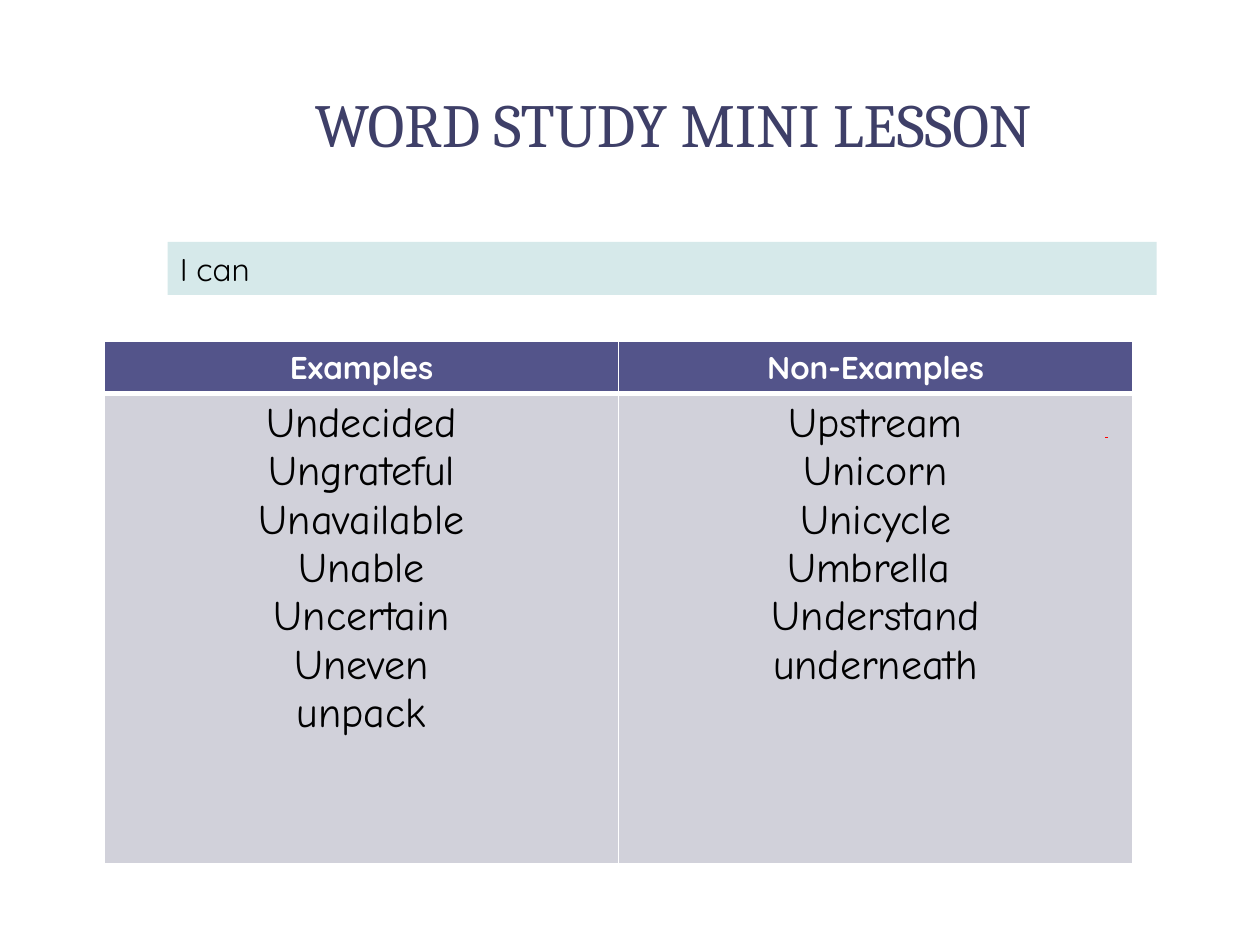
from lxml.etree import SubElement
from pptx import Presentation
from pptx.dml.color import RGBColor
from pptx.enum.shapes import MSO_CONNECTOR, MSO_SHAPE
from pptx.enum.text import MSO_ANCHOR, PP_ALIGN
from pptx.oxml.ns import qn
from pptx.util import Inches, Pt

TITLE_BLUE = RGBColor(0x3E, 0x3F, 0x68)
HEADER_BLUE = RGBColor(0x53, 0x54, 0x8A)
BODY_GREY = RGBColor(0xD1, 0xD1, 0xDA)
PALE_TEAL = RGBColor(0xD6, 0xE9, 0xEA)
RED = RGBColor(0xFF, 0x00, 0x00)
WHITE = RGBColor(0xFF, 0xFF, 0xFF)
BLACK = RGBColor(0x00, 0x00, 0x00)


def add_text(paragraph, text, font, size, color, align=PP_ALIGN.CENTER, bold=False):
    paragraph.alignment = align
    run = paragraph.add_run()
    run.text = text
    run.font.name = font
    run.font.size = Pt(size)
    run.font.color.rgb = color
    run.font.bold = bold


def add_borders(cell, top, bottom):
    properties = cell._tc.get_or_add_tcPr()
    for side, width in (("L", 1), ("R", 1), ("T", top), ("B", bottom)):
        line = SubElement(properties, qn(f"a:ln{side}"), w=str(Pt(width)))
        fill = SubElement(line, qn("a:solidFill"))
        SubElement(fill, qn("a:srgbClr"), val=str(WHITE))


prs = Presentation()
prs.slide_width, prs.slide_height = Inches(10), Inches(7.5)
slide = prs.slides.add_slide(prs.slide_layouts[5])

# Title
title = slide.shapes.title
title.left, title.top = Inches(0.83), Inches(0.41)
title.width, title.height = Inches(9.03), Inches(1.14)
title.text_frame.vertical_anchor = MSO_ANCHOR.MIDDLE
add_text(title.text_frame.paragraphs[0], "WORD STUDY MINI LESSON", "Cambria", 35, TITLE_BLUE)

# Word lists
columns = {
    "Examples": ["Undecided", "Ungrateful", "Unavailable", "Unable",
                 "Uncertain", "Uneven", "unpack"],
    "Non-Examples": ["Upstream", "Unicorn", "Unicycle", "Umbrella ",
                     "Understand", "underneath"],
}
word_table = slide.shapes.add_table(
    2, len(columns), Inches(0.83), Inches(2.71), Inches(8.16), Inches(4.13)).table
word_table.rows[0].height = Inches(0.4)
word_table.rows[1].height = Inches(3.73)
for index, (heading, words) in enumerate(columns.items()):
    word_table.columns[index].width = Inches(4.08)
    header, body = word_table.cell(0, index), word_table.cell(1, index)
    add_borders(header, top=1, bottom=3)
    add_borders(body, top=3, bottom=1)
    for cell, color in ((header, HEADER_BLUE), (body, BODY_GREY)):
        cell.fill.solid()
        cell.fill.fore_color.rgb = color
    add_text(header.text_frame.paragraphs[0], heading, "Quicksand", 18, WHITE, bold=True)
    for number, word in enumerate(words):
        frame = body.text_frame
        paragraph = frame.add_paragraph() if number else frame.paragraphs[0]
        add_text(paragraph, word, "Comic Neue", 24, BLACK)

# Learning goal
goal = slide.shapes.add_shape(
    MSO_SHAPE.RECTANGLE, Inches(1.33), Inches(1.92), Inches(7.85), Inches(0.42))
goal.shadow.inherit = False
goal.fill.solid()
goal.fill.fore_color.rgb = PALE_TEAL
goal.line.fill.background()
goal.text_frame.word_wrap = True
add_text(goal.text_frame.paragraphs[0], "I can", "Quicksand", 18, BLACK, PP_ALIGN.LEFT)

# Small pen mark
pen_mark = slide.shapes.add_connector(
    MSO_CONNECTOR.STRAIGHT, Inches(8.78), Inches(3.47), Inches(8.78), Inches(3.48))
pen_mark.line.color.rgb = RED
pen_mark.line.width = Pt(1.5)
SubElement(pen_mark._element.spPr, qn("a:effectLst"))

prs.save("out.pptx")
